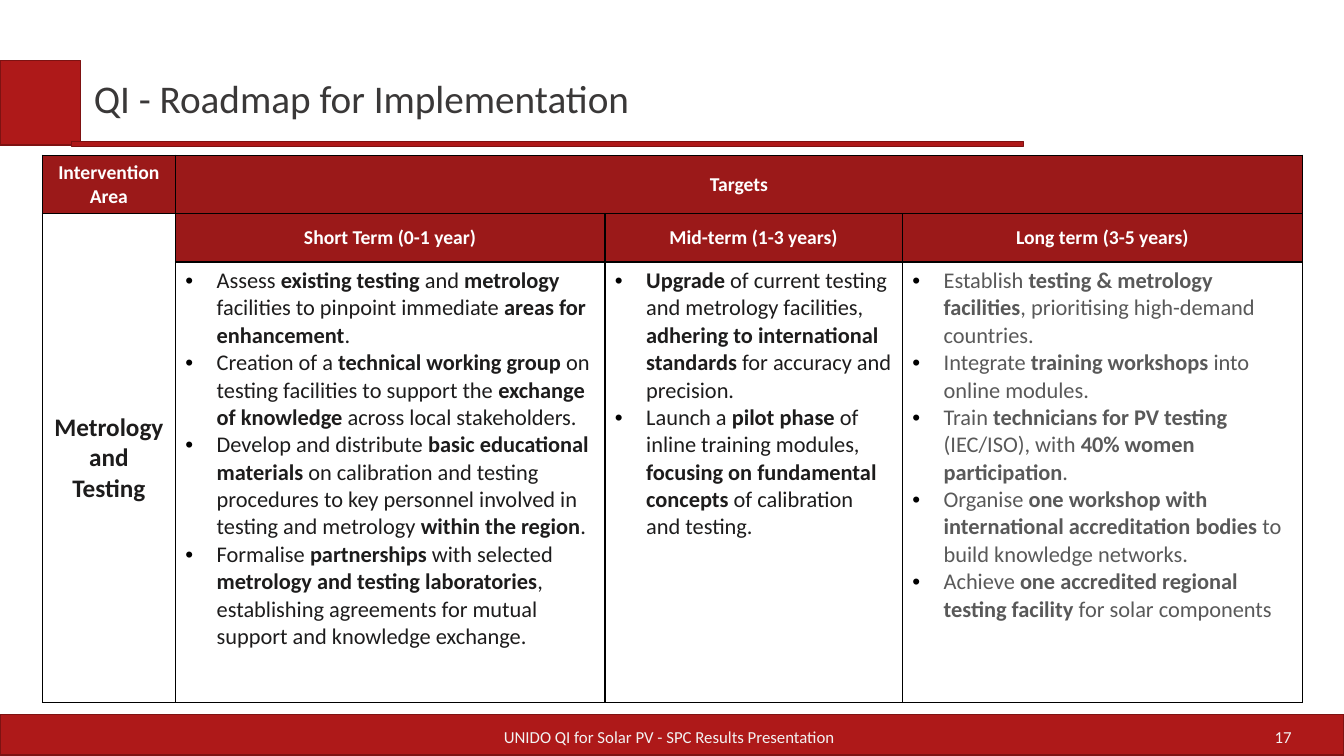
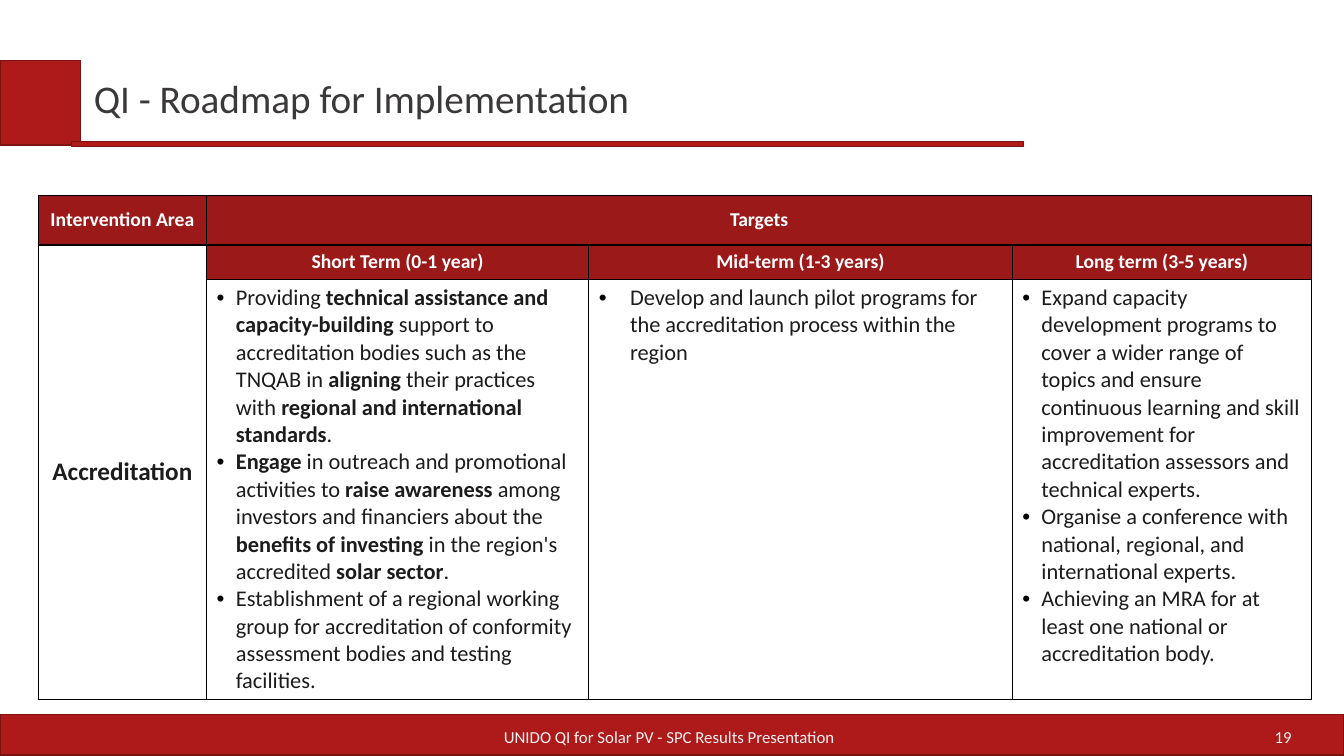
from dataclasses import dataclass

from lxml.etree import SubElement
from pptx import Presentation
from pptx.dml.color import RGBColor
from pptx.enum.shapes import MSO_SHAPE as Shape
from pptx.enum.text import MSO_ANCHOR as Anchor, MSO_AUTO_SIZE as AutoSize, PP_ALIGN as Align
from pptx.oxml.ns import qn
from pptx.util import Inches, Pt


@dataclass(frozen=True)
class Theme:
    font: str = "Calibri"
    band: str = "AE1919"
    band_edge: str = "7E1212"
    header: str = "9B1919"
    border: str = "000000"
    white: str = "FFFFFF"
    title: str = "3A3838"
    ink: str = "1D1C1C"
    muted: str = "595959"
    footer: str = "F2F2F2"
    title_size: int = 28
    area_size: int = 18
    body_size: int = 16
    header_size: int = 14
    footer_size: int = 12
    edge_width: float = 0.85
    border_width: float = 1


THEME = Theme()
FOOTER = "UNIDO QI for Solar PV - SPC Results Presentation"
TITLE = "QI - Roadmap for Implementation"
TERMS = ["Short Term (0-1 year)", "Mid-term (1-3 years)", "Long term (3-5 years)"]


def write(paragraph, text, *, size, color, bold=False, align=Align.LEFT):
    """Fill a paragraph; text between ** marks switches the weight."""
    paragraph.alignment = align
    for index, part in enumerate(text.split("**")):
        if part:
            run = paragraph.add_run()
            run.text = part
            run.font.name = THEME.font
            run.font.size = Pt(size)
            run.font.bold = bold != bool(index % 2)
            run.font.color.rgb = RGBColor.from_string(color)


def add_bullet(paragraph, indent):
    props = paragraph._p.get_or_add_pPr()
    props.set("marL", str(Inches(indent)))
    props.set("indent", str(-Inches(indent)))
    bullet_color = SubElement(props, qn("a:buClr"))
    SubElement(bullet_color, qn("a:srgbClr"), val=THEME.border)
    SubElement(props, qn("a:buFont"), typeface="Arial")
    SubElement(props, qn("a:buChar"), char="•")


def add_borders(cell):
    props = cell._tc.get_or_add_tcPr()
    for side in ("lnL", "lnR", "lnT", "lnB"):
        line = SubElement(props, qn(f"a:{side}"), w=str(Pt(THEME.border_width)))
        fill = SubElement(line, qn("a:solidFill"))
        SubElement(fill, qn("a:srgbClr"), val=THEME.border)


class Deck:
    def __init__(self):
        self.prs = Presentation()
        self.prs.slide_width, self.prs.slide_height = Inches(13.33), Inches(7.5)
        self.slide = None

    def add_slide(self, title, number):
        self.slide = self.prs.slides.add_slide(self.prs.slide_layouts[5])
        # Bands: footer bar, title block, title rule
        self.band(0, 7.09, 13.33, 0.4)
        self.band(0, 0.6, 0.8, 0.84)
        self.band(0.71, 1.4, 9.44, 0.05)
        # Title and footer
        self.title(title)
        self.label(FOOTER, 3.61, 6.06, Align.CENTER)
        self.label(str(number), 9.77, 3.14, Align.RIGHT)

    def band(self, left, top, width, height):
        band = self.slide.shapes.add_shape(
            Shape.RECTANGLE, Inches(left), Inches(top), Inches(width), Inches(height))
        band.shadow.inherit = False
        band.fill.solid()
        band.fill.fore_color.rgb = RGBColor.from_string(THEME.band)
        band.line.color.rgb = RGBColor.from_string(THEME.band_edge)
        band.line.width = Pt(THEME.edge_width)

    def title(self, text):
        title = self.slide.shapes.title
        title.left, title.top = Inches(0.83), Inches(0.64)
        title.width, title.height = Inches(5.6), Inches(0.72)
        frame = title.text_frame
        frame.auto_size = AutoSize.NONE
        frame.vertical_anchor = Anchor.MIDDLE
        frame.paragraphs[0].line_spacing = 0.9
        write(frame.paragraphs[0], text, size=THEME.title_size, color=THEME.title)

    def label(self, text, left, width, align):
        box = self.slide.shapes.add_textbox(Inches(left), Inches(7.11), Inches(width), Inches(0.4))
        frame = box.text_frame
        frame.word_wrap = True
        frame.vertical_anchor = Anchor.MIDDLE
        write(frame.paragraphs[0], text, size=THEME.footer_size, color=THEME.footer, align=align)

    def heading(self, cell, text, *, size=THEME.header_size, color=THEME.white):
        cell.vertical_anchor = Anchor.MIDDLE
        write(cell.text_frame.paragraphs[0], text, size=size, color=color,
              bold=True, align=Align.CENTER)

    def bullets(self, cell, items, indent, color=THEME.ink):
        frame = cell.text_frame
        for index, item in enumerate(items):
            paragraph = frame.add_paragraph() if index else frame.paragraphs[0]
            add_bullet(paragraph, indent)
            write(paragraph, item, size=THEME.body_size, color=color)

    def roadmap(self, area, targets, *, left, top, widths, heights):
        """Draw the table; targets holds the bullet settings of each term."""
        table = self.slide.shapes.add_table(
            len(heights), len(widths), Inches(left), Inches(top),
            Inches(sum(widths)), Inches(sum(heights))).table
        table.first_row = table.horz_banding = False
        for column, width in zip(table.columns, widths):
            column.width = Inches(width)
        for row, height in zip(table.rows, heights):
            row.height = Inches(height)

        # Borders and fills
        for r in range(len(heights)):
            for c in range(len(widths)):
                cell = table.cell(r, c)
                add_borders(cell)
                if r == 0 or (r == 1 and c > 0):
                    cell.fill.solid()
                    cell.fill.fore_color.rgb = RGBColor.from_string(THEME.header)
                else:
                    cell.fill.background()

        # Headings, area and targets
        table.cell(0, 1).merge(table.cell(0, 3))
        table.cell(1, 0).merge(table.cell(2, 0))
        self.heading(table.cell(0, 0), "Intervention Area")
        self.heading(table.cell(0, 1), "Targets")
        self.heading(table.cell(1, 0), area, size=THEME.area_size, color=THEME.ink)
        for c, (term, target) in enumerate(zip(TERMS, targets), start=1):
            self.heading(table.cell(1, c), term)
            self.bullets(table.cell(2, c), **target)


def main():
    deck = Deck()

    # Metrology and testing
    deck.add_slide(TITLE, 17)
    deck.roadmap("Metrology and Testing", [
        dict(indent=0.31, items=[
            "Assess **existing testing** and **metrology** facilities to pinpoint immediate "
            "**areas for enhancement**.",
            "Creation of a **technical working group** on testing facilities to support the "
            "**exchange of knowledge** across local stakeholders.",
            "Develop and distribute **basic educational materials** on calibration and testing "
            "procedures to key personnel involved in testing and metrology "
            "**within the region**.",
            "Formalise **partnerships** with selected **metrology and testing laboratories**, "
            "establishing agreements for mutual support and knowledge exchange.",
        ]),
        dict(indent=0.31, items=[
            "**Upgrade** of current testing and metrology facilities, "
            "**adhering to international standards** for accuracy and precision.",
            "Launch a **pilot phase** of inline training modules, "
            "**focusing on fundamental concepts** of calibration and testing.",
        ]),
        dict(indent=0.31, color=THEME.muted, items=[
            "Establish **testing & metrology facilities**, prioritising high-demand countries.",
            "Integrate **training workshops** into online modules.",
            "Train **technicians for PV testing** (IEC/ISO), with **40% women participation**.",
            "Organise **one workshop with international accreditation bodies** to build "
            "knowledge networks.",
            "Achieve **one accredited regional testing facility** for solar components",
        ]),
    ], left=0.42, top=1.54, widths=[1.32, 4.26, 2.95, 3.97], heights=[0.58, 0.48, 4.37])

    # Accreditation
    deck.add_slide(TITLE, 19)
    deck.roadmap("Accreditation", [
        dict(indent=0.19, items=[
            "Providing **technical assistance and capacity-building** support to accreditation "
            "bodies such as the TNQAB in **aligning** their practices with "
            "**regional and international standards**.",
            "**Engage** in outreach and promotional activities to **raise awareness** among "
            "investors and financiers about the **benefits of investing** in the region's "
            "accredited **solar sector**.",
            "Establishment of a regional working group for accreditation of conformity "
            "assessment bodies and testing facilities.",
        ]),
        dict(indent=0.31, items=[
            "Develop and launch pilot programs for the accreditation process within the region",
        ]),
        dict(indent=0.19, items=[
            "Expand capacity development programs to cover a wider range of topics and ensure "
            "continuous learning and skill improvement for accreditation assessors and "
            "technical experts.",
            "Organise a conference with national, regional, and international experts.",
            "Achieving an MRA for at least one national or accreditation body.",
        ]),
    ], left=0.38, top=1.94, widths=[1.67, 3.79, 4.2, 2.97], heights=[0.49, 0.34, 4.17])

    deck.prs.save("out.pptx")


if __name__ == "__main__":
    main()
